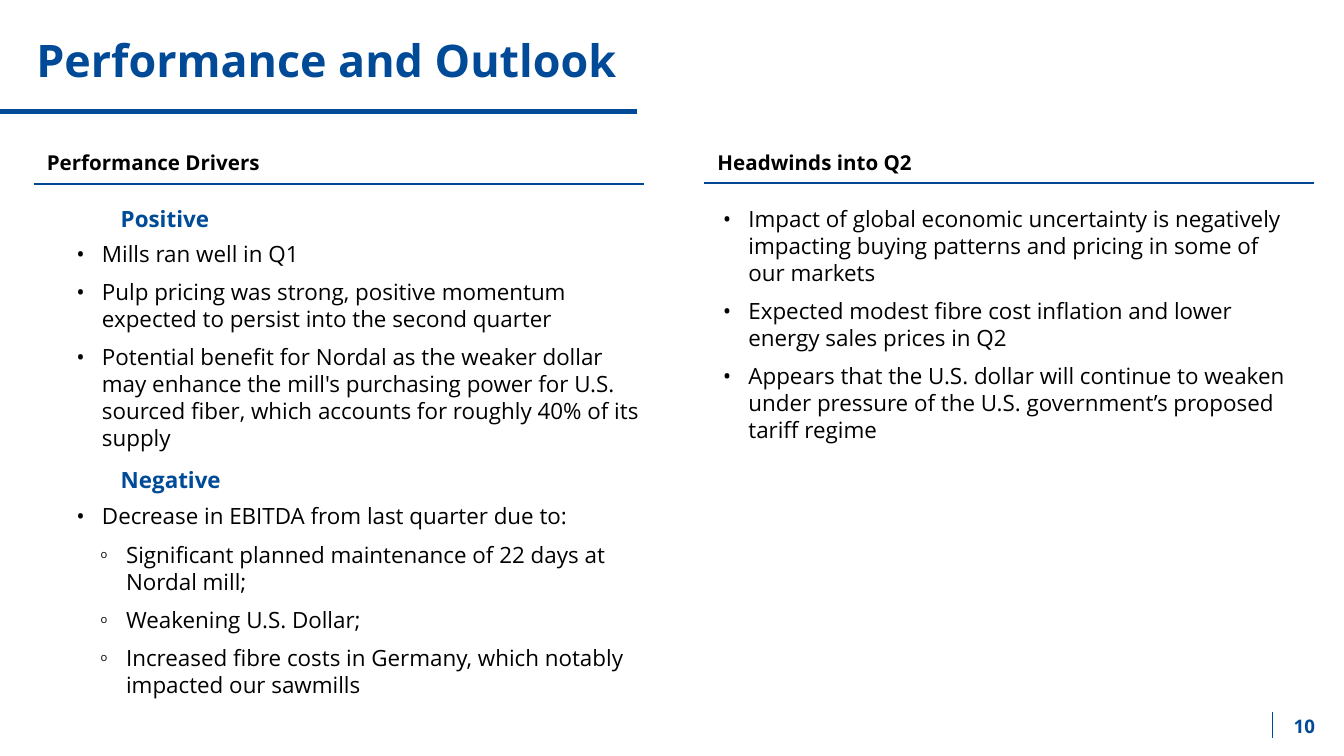
from lxml import etree
from pptx import Presentation
from pptx.dml.color import RGBColor
from pptx.enum.shapes import MSO_CONNECTOR
from pptx.enum.text import MSO_ANCHOR, PP_ALIGN
from pptx.oxml.ns import qn
from pptx.util import Inches, Pt

STRAIGHT = MSO_CONNECTOR.STRAIGHT
TOP, MIDDLE = MSO_ANCHOR.TOP, MSO_ANCHOR.MIDDLE
LEFT, CENTER = PP_ALIGN.LEFT, PP_ALIGN.CENTER
FONT = "Open Sans"
COLORS = {"brand": "004A97", "rule": "004894", "label": "004B97", "text": "000000"}

prs = Presentation()
prs.slide_width = Inches(10)
prs.slide_height = Inches(10) * 9 // 16
s = prs.slides.add_slide(prs.slide_layouts[5])


def add_line(x1, y1, x2, y2, color, width):
    line = s.shapes.add_connector(STRAIGHT, Inches(x1), Inches(y1), Inches(x2), Inches(y2))
    line.line.color.rgb = RGBColor.from_string(COLORS[color])
    line.line.width = Pt(width)
    etree.SubElement(line._element.spPr, qn("a:effectLst"))


def write(sp, box, paragraphs, size, color="text", bold=False, anchor=TOP,
          align=LEFT, bullet=None, bullet_pct=100):
    """Place a text shape and fill it, with hanging bullets if a bullet is given."""
    sp.left, sp.top, sp.width, sp.height = [Inches(v) for v in box]
    tf = sp.text_frame
    tf.word_wrap = True
    tf.vertical_anchor = anchor
    for i, text in enumerate(paragraphs):
        p = tf.add_paragraph() if i else tf.paragraphs[0]
        p.alignment = align
        if bullet:
            p.space_after = Pt(6)
            pPr = p._p.get_or_add_pPr()
            pPr.set("marL", str(Inches(0.19)))
            pPr.set("indent", str(-Inches(0.19)))
            bu_color = etree.SubElement(pPr, qn("a:buClr"))
            etree.SubElement(bu_color, qn("a:srgbClr"), val=COLORS["text"])
            etree.SubElement(pPr, qn("a:buSzPct"), val=str(bullet_pct * 1000))
            etree.SubElement(pPr, qn("a:buFont"), typeface=FONT)
            etree.SubElement(pPr, qn("a:buChar"), char=bullet)
        r = p.add_run()
        r.text = text
        r.font.name = FONT
        r.font.size = Pt(size)
        r.font.bold = bold
        r.font.color.rgb = RGBColor.from_string(COLORS[color])
    return tf


# Title and page number
tf = write(s.shapes.title, (0.17, 0.14, 9.15, 0.63), ["Performance and Outlook"],
           24, "brand", bold=True)
tf.margin_top = tf.margin_bottom = Inches(0.1)
add_line(0, 0.83, 4.74, 0.83, "brand", 3)

add_line(9.47, 5.3, 9.47, 5.49, "brand", 0.75)
write(s.shapes.add_textbox(0, 0, 0, 0), (9.47, 5.26, 0.47, 0.28), ["10"],
      10, "brand", bold=True, anchor=MIDDLE, align=CENTER)

# Column headings
for heading, x, rule_y in [("Performance Drivers", 0.25, 1.37), ("Headwinds into Q2", 5.24, 1.36)]:
    add_line(x, rule_y, x + 4.54, rule_y, "rule", 1)
    write(s.shapes.add_textbox(0, 0, 0, 0), (x, 1.07, 4.43, 0.29), [heading], 11, bold=True)

# Labels in the left column
for label, y in [("Positive", 1.48), ("Negative", 3.42)]:
    write(s.shapes.add_textbox(0, 0, 0, 0), (0.8, y, 1.75, 0.29), [label],
          12, "label", bold=True, anchor=MIDDLE)

# Bullet lists
bullet_lists = [
    ((0.47, 1.74, 4.45, 1.68), [
        "Mills ran well in Q1",
        "Pulp pricing was strong, positive momentum expected to persist into the second quarter",
        "Potential benefit for Nordal as the weaker dollar may enhance the mill's purchasing "
        "power for U.S. sourced fiber, which accounts for roughly 40% of its supply",
    ]),
    ((0.47, 3.69, 4.45, 0.3), ["Decrease in EBITDA from last quarter due to:"]),
    ((5.28, 1.48, 4.45, 1.88), [
        "Impact of global economic uncertainty is negatively impacting buying patterns and "
        "pricing in some of our markets",
        "Expected modest fibre cost inflation and lower energy sales prices in Q2",
        "Appears that the U.S. dollar will continue to weaken under pressure of the U.S. "
        "government’s proposed tariff regime",
    ]),
]
for box, items in bullet_lists:
    write(s.shapes.add_textbox(0, 0, 0, 0), box, items, 12, bullet="•")

ebitda_causes = [
    "Significant planned maintenance of 22 days at Nordal mill;",
    "Weakening U.S. Dollar;",
    "Increased fibre costs in Germany, which notably impacted our sawmills",
]
write(s.shapes.add_textbox(0, 0, 0, 0), (0.65, 3.73, 4.26, 1.76), ebitda_causes,
      12, anchor=MIDDLE, bullet="o", bullet_pct=50)

prs.save("out.pptx")
